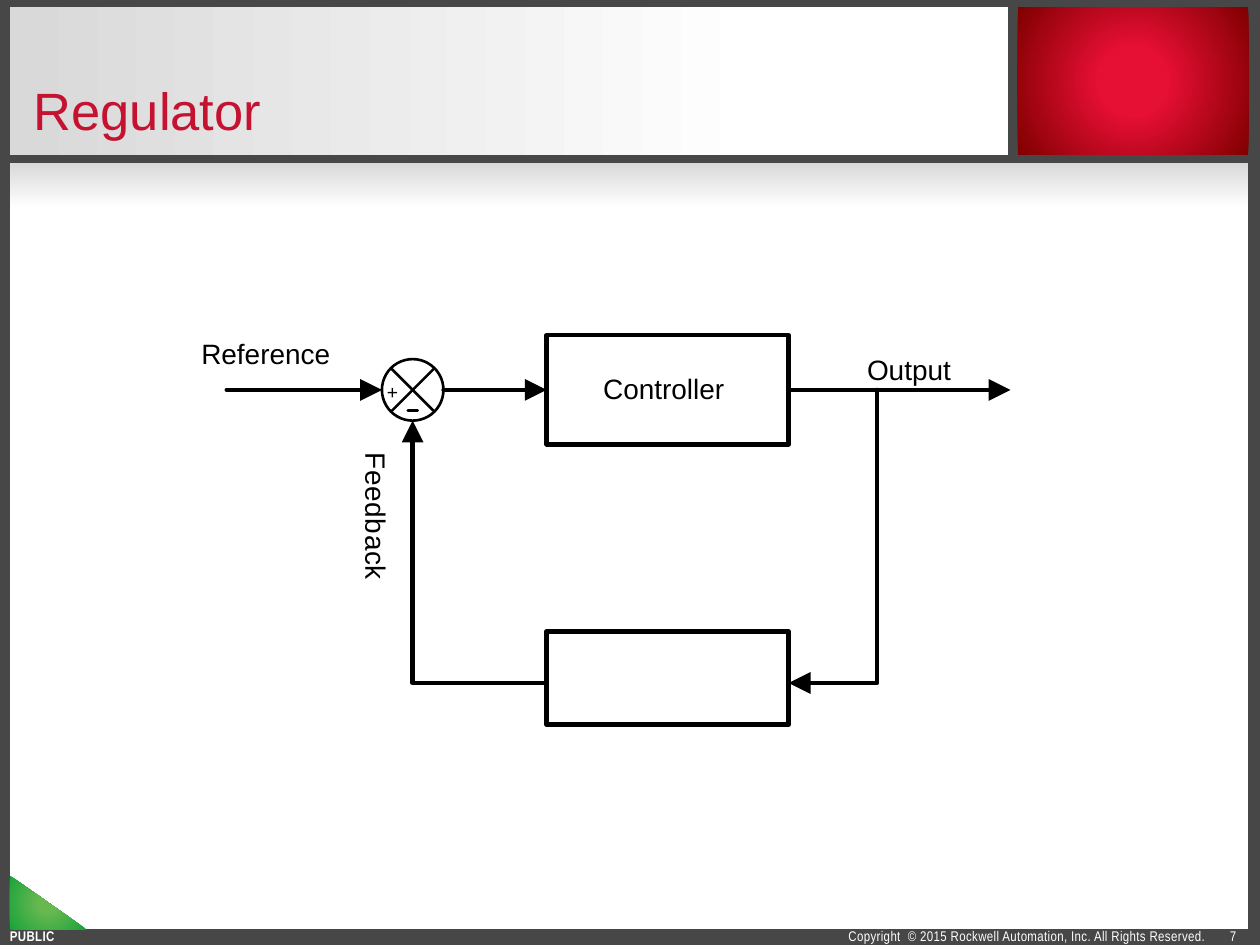
import dataclasses

import pptx
import pptx.dml.color
import pptx.enum.shapes
import pptx.enum.text
import pptx.oxml
import pptx.oxml.ns
import pptx.util

Cm = pptx.util.Cm
Pt = pptx.util.Pt
qn = pptx.oxml.ns.qn
KIND = pptx.enum.shapes.MSO_SHAPE
ALIGN = pptx.enum.text.PP_ALIGN
ANCHOR = pptx.enum.text.MSO_ANCHOR


@dataclasses.dataclass(frozen=True)
class Theme:
    frame: str = "474747"
    grey: str = "D9D9D9"
    white: str = "FFFFFF"
    ink: str = "000000"
    title: str = "C41230"
    red: tuple = ("E60F34", "800000")
    green: tuple = ("66B84F", "1BA33C")
    font: str = "Arial"
    narrow: str = "Arial Narrow"
    head: int = 30
    label: int = 16
    sign: int = 11
    foot: int = 8
    thick: float = 2.5
    thin: float = 1.5


T = Theme()


def rgb(code):
    return pptx.dml.color.RGBColor.from_string(code)


def add_tag(parent, tag, **attrs):
    node = pptx.oxml.parse_xml(f"<a:{tag} {pptx.oxml.ns.nsdecls('a')}/>")
    for key, value in attrs.items():
        node.set(key, value)
    parent.append(node)
    return node


def panel(slide, kind, area, colors, stops, angle=None):
    """Add a gradient area: linear with an angle, else radial."""
    shape = slide.shapes.add_shape(kind, *map(Cm, area))
    shape.shadow.inherit = False
    shape.line.fill.background()
    shape.fill.gradient()
    for stop, color, place in zip(shape.fill.gradient_stops, colors, stops):
        stop.color.rgb = rgb(color)
        stop.position = place
    if angle is not None:
        shape.fill.gradient_angle = angle
        return
    grad = shape._element.spPr.find(qn("a:gradFill"))
    grad.remove(grad.find(qn("a:lin")))
    radial = add_tag(grad, "path", path="circle")
    add_tag(radial, "fillToRect", l="50000", t="50000", r="50000", b="50000")


def text(slide, area, words, size, color=T.ink, font=T.font, bold=False,
         align=ALIGN.LEFT, anchor=ANCHOR.TOP, inset=True, space=None, track=0):
    box = slide.shapes.add_textbox(*map(Cm, area))
    frame = box.text_frame
    frame.word_wrap = True
    frame.vertical_anchor = anchor
    if not inset:
        frame.margin_left = frame.margin_right = 0
        frame.margin_top = frame.margin_bottom = 0
    para = frame.paragraphs[0]
    para.alignment = align
    if space:
        para.line_spacing = space
    run = para.add_run()
    run.text = words
    run.font.name = font
    run.font.size = Pt(size)
    run.font.bold = bold
    run.font.color.rgb = rgb(color)
    if track:
        run.font._element.set("spc", str(track))
    return box


def stroke(shape, width, arrow=False):
    shape.line.color.rgb = rgb(T.ink)
    shape.line.width = Pt(width)
    line = shape.line._get_or_add_ln()
    line.set("cap", "rnd")
    add_tag(line, "round")
    if arrow:
        add_tag(line, "tailEnd", type="triangle", w="lg", len="lg")


def block(slide, kind, area):
    shape = slide.shapes.add_shape(kind, *map(Cm, area))
    shape.shadow.inherit = False
    shape.fill.background()
    stroke(shape, T.thick if kind == KIND.RECTANGLE else T.thin)
    return shape


def link(slide, x1, y1, x2, y2, width=T.thick, arrow=True):
    line = slide.shapes.add_connector(
        pptx.enum.shapes.MSO_CONNECTOR.STRAIGHT, *map(Cm, (x1, y1, x2, y2)))
    stroke(line, width, arrow)
    add_tag(line._element.spPr, "effectLst")
    return line


def bend(slide, *points):
    """Add an open path with an arrowhead at its last point."""
    start, *rest = [(Cm(x), Cm(y)) for x, y in points]
    maker = slide.shapes.build_freeform(*start)
    maker.add_line_segments(rest, close=False)
    shape = maker.convert_to_shape()
    shape.shadow.inherit = False
    shape.fill.background()
    stroke(shape, T.thick, True)


def frame(slide):
    # Page areas
    fade = (T.grey, T.white)
    panel(slide, KIND.RECTANGLE, (0.2, 3.28, 24.97, 15.44), fade, (0, 0.06), 270)
    panel(slide, KIND.RECTANGLE, (0.2, 0.15, 20.12, 2.97), fade, (0.01, 0.75), 0)
    panel(slide, KIND.RECTANGLE, (20.52, 0.15, 4.65, 2.97), T.red, (0.25, 1))
    panel(slide, KIND.RIGHT_TRIANGLE, (0.2, 17.65, 1.55, 1.09), T.green, (0.22, 0.99))

    # Title and footer
    text(slide, (0.43, 0.43, 19.69, 2.54), "Regulator", T.head, T.title,
         anchor=ANCHOR.BOTTOM, space=Pt(T.head))
    foot = dict(size=T.foot, color=T.white, font=T.narrow)
    text(slide, (-0.05, 18.57, 24.61, 0.61),
         "Copyright  © 2015 Rockwell Automation, Inc. All Rights Reserved.",
         align=ALIGN.RIGHT, track=20, **foot)
    text(slide, (-0.05, 18.62, 1.6, 0.53), "PUBLIC", bold=True,
         anchor=ANCHOR.BOTTOM, space=0.8, track=20, **foot)
    text(slide, (23.93, 18.57, 1.24, 0.63), "7", align=ALIGN.RIGHT, **foot)


def loop(slide):
    mid, low = 7.86, 13.77          # heights of forward and return paths
    hub, rad, arm = 8.32, 0.62, 0.42  # summing point
    left, wide = 11.02, 4.88        # both blocks
    right, tap = left + wide, 17.68

    # Summing point
    block(slide, KIND.OVAL, (hub - rad, mid - rad, 2 * rad, 2 * rad))
    for side in (-arm, arm):
        link(slide, hub - arm, mid - side, hub + arm, mid + side, T.thin, False)
    link(slide, hub - 0.1, mid + arm, hub + 0.1, mid + arm, T.thin, False)
    text(slide, (7.8, 7.67, 0.43, 0.58), "+", T.sign, inset=False)

    # Blocks
    control = block(slide, KIND.RECTANGLE, (left, mid - 1.1, wide, 2.2))
    block(slide, KIND.RECTANGLE, (left, 12.73, wide, 1.88))

    # Signals
    link(slide, 4.57, mid, hub - rad, mid)
    link(slide, hub + rad, mid, left, mid).end_connect(control, 1)
    link(slide, right, mid, 20.37, mid).begin_connect(control, 3)
    bend(slide, (left, low), (hub, low), (hub, mid + rad))
    bend(slide, (tap, mid), (tap, low), (right, low))

    # Labels
    for words, x, y in (("Reference", 4.06, 6.78), ("Controller", 12.16, 7.49),
                        ("Output", 17.48, 7.11)):
        text(slide, (x, y, 3.1, 0.65), words, T.label, inset=False)
    side = text(slide, (6.21, 10.2, 2.8, 0.64), "Feedback", T.label,
                inset=False, track=40)
    side.rotation = 90


def main():
    deck = pptx.Presentation()
    deck.slide_width, deck.slide_height = Cm(25.4), Cm(19.05)
    slide = deck.slides.add_slide(deck.slide_layouts[6])
    slide.background.fill.solid()
    slide.background.fill.fore_color.rgb = rgb(T.frame)
    frame(slide)
    loop(slide)
    deck.save("out.pptx")


if __name__ == "__main__":
    main()
